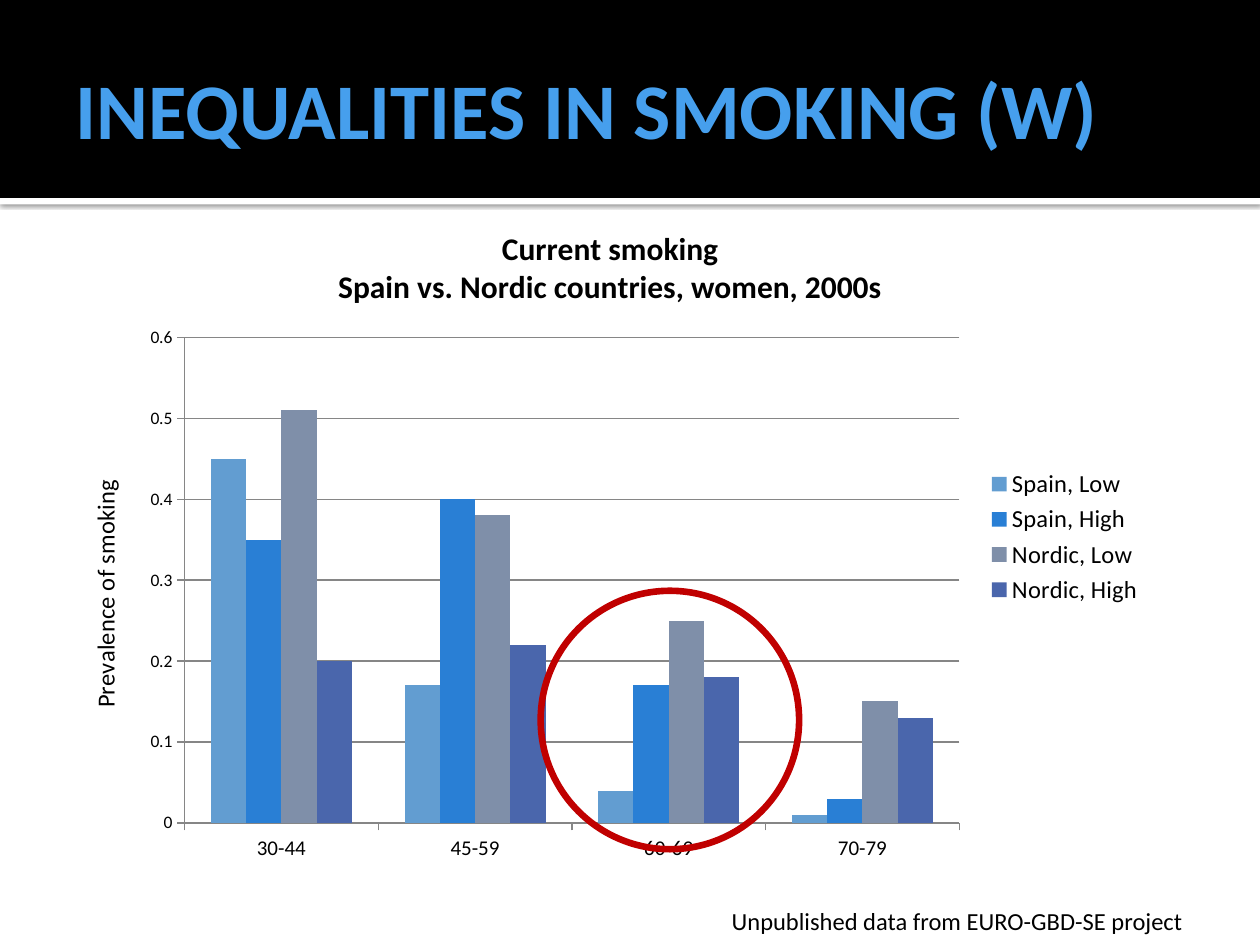
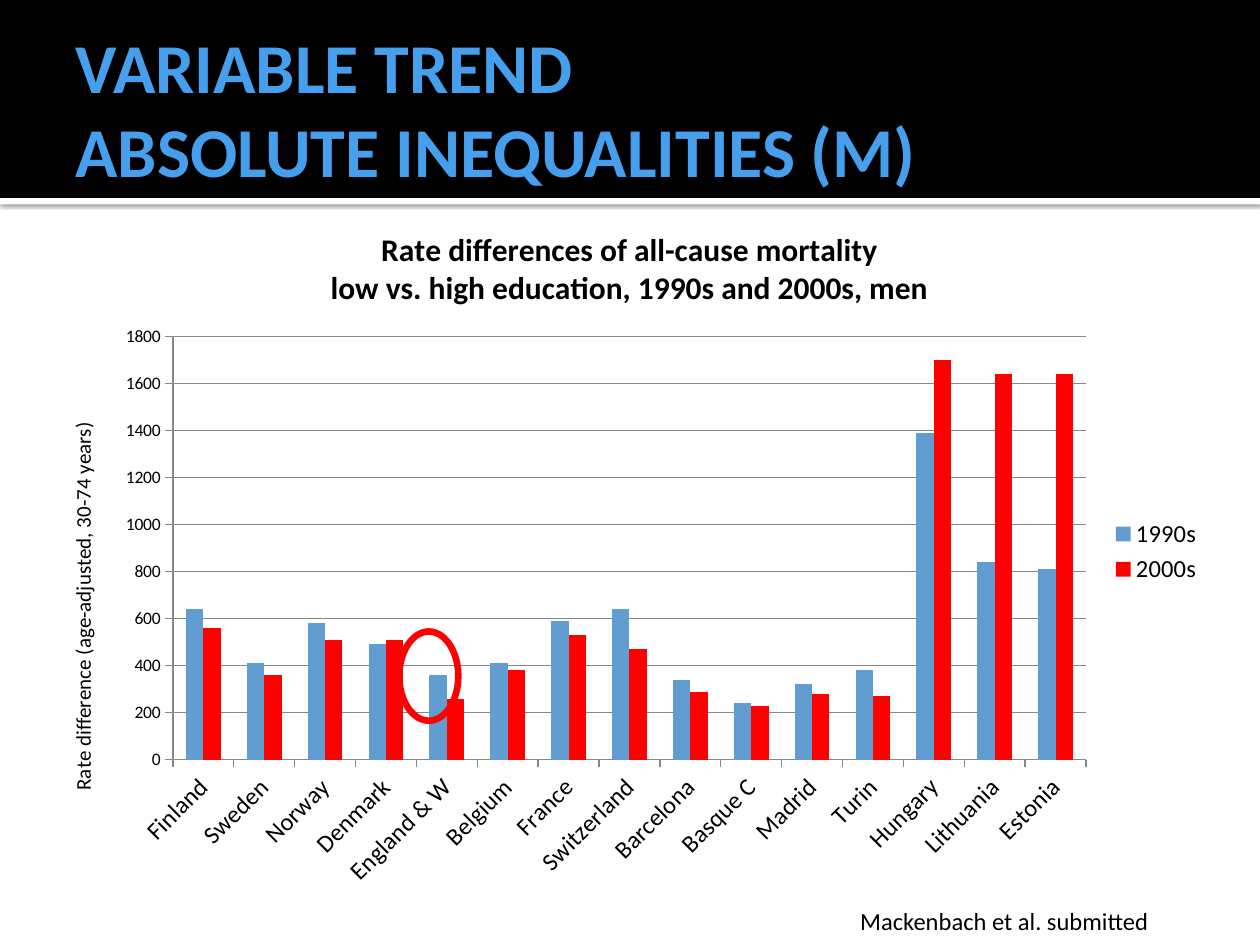
from lxml.etree import SubElement
from pptx import Presentation
from pptx.chart.data import CategoryChartData
from pptx.dml.color import RGBColor
from pptx.enum.chart import XL_CHART_TYPE as ChartType
from pptx.enum.chart import XL_LEGEND_POSITION as LegendPosition
from pptx.enum.chart import XL_TICK_MARK as TickMark
from pptx.enum.shapes import MSO_SHAPE as Preset
from pptx.enum.text import MSO_ANCHOR as Anchor
from pptx.enum.text import MSO_AUTO_SIZE as AutoSize
from pptx.enum.text import PP_ALIGN as Align
from pptx.oxml import parse_xml
from pptx.oxml.ns import nsdecls, qn
from pptx.util import Cm, Pt

FONT = "Calibri"
COLORS = {
    "black": "000000",
    "white": "FFFFFF",
    "title": "469FED",
    "grid": "868686",
    "light blue": "629DD1",
    "blue": "297FD5",
    "grey": "7F8FA9",
    "indigo": "4A66AC",
    "red": "FF0000",
    "dark red": "C00000",
}
SLIDE_WIDTH, SLIDE_HEIGHT = 25.4, 19.05
BAND_HEIGHT, STRIP_HEIGHT = 3.99, 0.13
CHART_TOP = BAND_HEIGHT + STRIP_HEIGHT
TITLE_BOX = (1.27, 0.43, 22.86, 3.48)
SOURCE_TOP, SOURCE_HEIGHT = 18.14, 0.86


def rgb(name):
    return RGBColor.from_string(COLORS[name])


def format_font(font, size, color="black", bold=False):
    font.name, font.size, font.bold = FONT, Pt(size), bold
    font.color.rgb = rgb(color)


def write_text(frame, text, size, color="black", bold=False, align=None):
    """Each line of the text becomes a paragraph; a vertical tab is a line break."""
    for index, line in enumerate(text.split("\n")):
        paragraph = frame.paragraphs[0] if index == 0 else frame.add_paragraph()
        paragraph.text = line
        paragraph.alignment = align
        for run in paragraph.runs:
            format_font(run.font, size, color, bold)


# Shared slide parts
def add_band(slide, top, height, color):
    band = slide.shapes.add_shape(
        Preset.RECTANGLE, 0, Cm(top), Cm(SLIDE_WIDTH), Cm(height))
    band.shadow.inherit = False
    band.fill.solid()
    band.fill.fore_color.rgb = rgb(color)
    band.line.fill.background()
    slide.shapes.title.element.addprevious(band.element)
    return band


def add_soft_shadow(shape):
    effects = shape.element.spPr.find(qn("a:effectLst"))
    effects.append(parse_xml(
        f'<a:outerShdw {nsdecls("a")} blurRad="{Pt(2.5)}" dist="{Pt(0.8)}" '
        f'dir="5400000" algn="t" rotWithShape="0">'
        f'<a:srgbClr val="{COLORS["black"]}"><a:alpha val="60000"/></a:srgbClr>'
        f'</a:outerShdw>'))


def add_titled_slide(presentation, text, size):
    slide = presentation.slides.add_slide(presentation.slide_layouts[5])
    add_soft_shadow(add_band(slide, BAND_HEIGHT, STRIP_HEIGHT, "white"))
    add_band(slide, 0, BAND_HEIGHT, "black")
    title = slide.shapes.title
    title.left, title.top, title.width, title.height = map(Cm, TITLE_BOX)
    frame = title.text_frame
    frame.auto_size = AutoSize.NONE
    frame.vertical_anchor = Anchor.MIDDLE
    frame.margin_right = Cm(0.13)
    write_text(frame, text, size, color="title", bold=True, align=Align.LEFT)
    return slide


def add_source(slide, text, left, width):
    box = slide.shapes.add_textbox(
        Cm(left), Cm(SOURCE_TOP), Cm(width), Cm(SOURCE_HEIGHT))
    box.text_frame.word_wrap = True
    write_text(box.text_frame, text, 14)


def add_ring(slide, left, top, width, height, color):
    ring = slide.shapes.add_shape(
        Preset.OVAL, Cm(left), Cm(top), Cm(width), Cm(height))
    ring.shadow.inherit = False
    ring.fill.background()
    ring.line.color.rgb = rgb(color)
    ring.line.width = Pt(3.78)


# Chart parts
def place_plot(chart, fractions):
    """Fix the inner plot area as fractions of the chart: x, y, w, h."""
    plot_area = chart.element.find(".//" + qn("c:plotArea"))
    for old_layout in plot_area.findall(qn("c:layout")):
        plot_area.remove(old_layout)
    layout = parse_xml(f'<c:layout {nsdecls("c")}/>')
    manual = SubElement(layout, qn("c:manualLayout"))
    settings = [("layoutTarget", "inner"), ("xMode", "edge"), ("yMode", "edge")]
    for tag, value in settings + list(zip("xywh", fractions)):
        SubElement(manual, qn(f"c:{tag}")).set("val", str(value))
    plot_area.insert(0, layout)


def format_line(line):
    line.color.rgb = rgb("grid")
    line.width = Pt(0.75)


def format_axes(chart, axis_title, axis_title_size, maximum, step,
                category_size, category_angle):
    for axis in (chart.category_axis, chart.value_axis):
        axis.major_tick_mark = TickMark.OUTSIDE
        axis.minor_tick_mark = TickMark.NONE
        format_line(axis.format.line)
    format_font(chart.category_axis.tick_labels.font, category_size)
    label_body = "/".join(map(qn, ("c:catAx", "c:txPr", "a:bodyPr")))
    chart.element.find(".//" + label_body).set("rot", str(category_angle * 60000))
    values = chart.value_axis
    values.minimum_scale, values.maximum_scale = 0, maximum
    values.major_unit = step
    values.has_major_gridlines = True
    format_line(values.major_gridlines.format.line)
    write_text(values.axis_title.text_frame, axis_title, axis_title_size)


def add_column_chart(slide, box, title, categories, series, plot, **axis_format):
    data = CategoryChartData()
    data.categories = categories
    for name, _, values in series:
        data.add_series(name, values)
    chart = slide.shapes.add_chart(
        ChartType.COLUMN_CLUSTERED, *map(Cm, box), data).chart
    format_font(chart.font, 10)
    chart.has_title = True
    write_text(chart.chart_title.text_frame, title, 18, bold=True)
    chart.has_legend = True
    chart.legend.position = LegendPosition.RIGHT
    chart.legend.include_in_layout = False
    format_font(chart.legend.font, 14)
    columns = chart.plots[0]
    columns.gap_width, columns.overlap = 150, 0
    columns.vary_by_categories = False
    for column, (_, color, _) in zip(columns.series, series):
        column.format.fill.solid()
        column.format.fill.fore_color.rgb = rgb(color)
    format_axes(chart, **axis_format)
    place_plot(chart, plot)


# Slides
def build_smoking_slide(presentation):
    slide = add_titled_slide(presentation, "INEQUALITIES IN SMOKING (W)", 45)
    add_column_chart(
        slide, (1.3, CHART_TOP, 22, 13.41),
        "Current smoking\nSpain vs. Nordic countries, women, 2000s",
        ["30-44", "45-59", "60-69", "70-79"],
        [("Spain, Low", "light blue", (0.45, 0.17, 0.04, 0.01)),
         ("Spain, High", "blue", (0.35, 0.4, 0.17, 0.03)),
         ("Nordic, Low", "grey", (0.51, 0.38, 0.25, 0.15)),
         ("Nordic, High", "indigo", (0.2, 0.22, 0.18, 0.13))],
        plot=(0.11, 0.2, 0.71, 0.73),
        axis_title="Prevalence of smoking", axis_title_size=14,
        maximum=0.6, step=0.1, category_size=12, category_angle=0)
    add_source(slide, "Unpublished data from EURO-GBD-SE project", 14.5, 9.6)
    add_ring(slide, 10.9, 11.91, 5.21, 5.21, "dark red")


def build_mortality_slide(presentation):
    slide = add_titled_slide(
        presentation, "VARIABLE TREND\vABSOLUTE INEQUALITIES (M)", 40)
    add_column_chart(
        slide, (0.89, CHART_TOP, 23.6, 14),
        "Rate differences of all-cause mortality\n"
        "low vs. high education, 1990s and 2000s, men",
        ["Finland", "Sweden", "Norway", "Denmark", "England & W",
         "Belgium", "France", "Switzerland", "Barcelona", "Basque C",
         "Madrid", "Turin", "Hungary", "Lithuania", "Estonia"],
        [("1990s", "light blue", (640, 410, 580, 490, 360, 410, 590, 640,
                                  340, 240, 320, 380, 1390, 840, 810)),
         ("2000s", "red", (560, 360, 510, 510, 260, 380, 530, 470,
                           290, 230, 280, 270, 1700, 1640, 1640))],
        plot=(0.11, 0.19, 0.78, 0.61),
        axis_title="Rate difference (age-adjusted, 30-74 years)",
        axis_title_size=12,
        maximum=1800, step=200, category_size=14, category_angle=-45)
    add_source(slide, "Mackenbach et al. submitted", 17.09, 7.59)
    add_ring(slide, 8.05, 12.73, 1.19, 1.8, "red")


def main():
    presentation = Presentation()
    presentation.slide_width = Cm(SLIDE_WIDTH)
    presentation.slide_height = Cm(SLIDE_HEIGHT)
    build_smoking_slide(presentation)
    build_mortality_slide(presentation)
    presentation.save("out.pptx")


if __name__ == "__main__":
    main()
